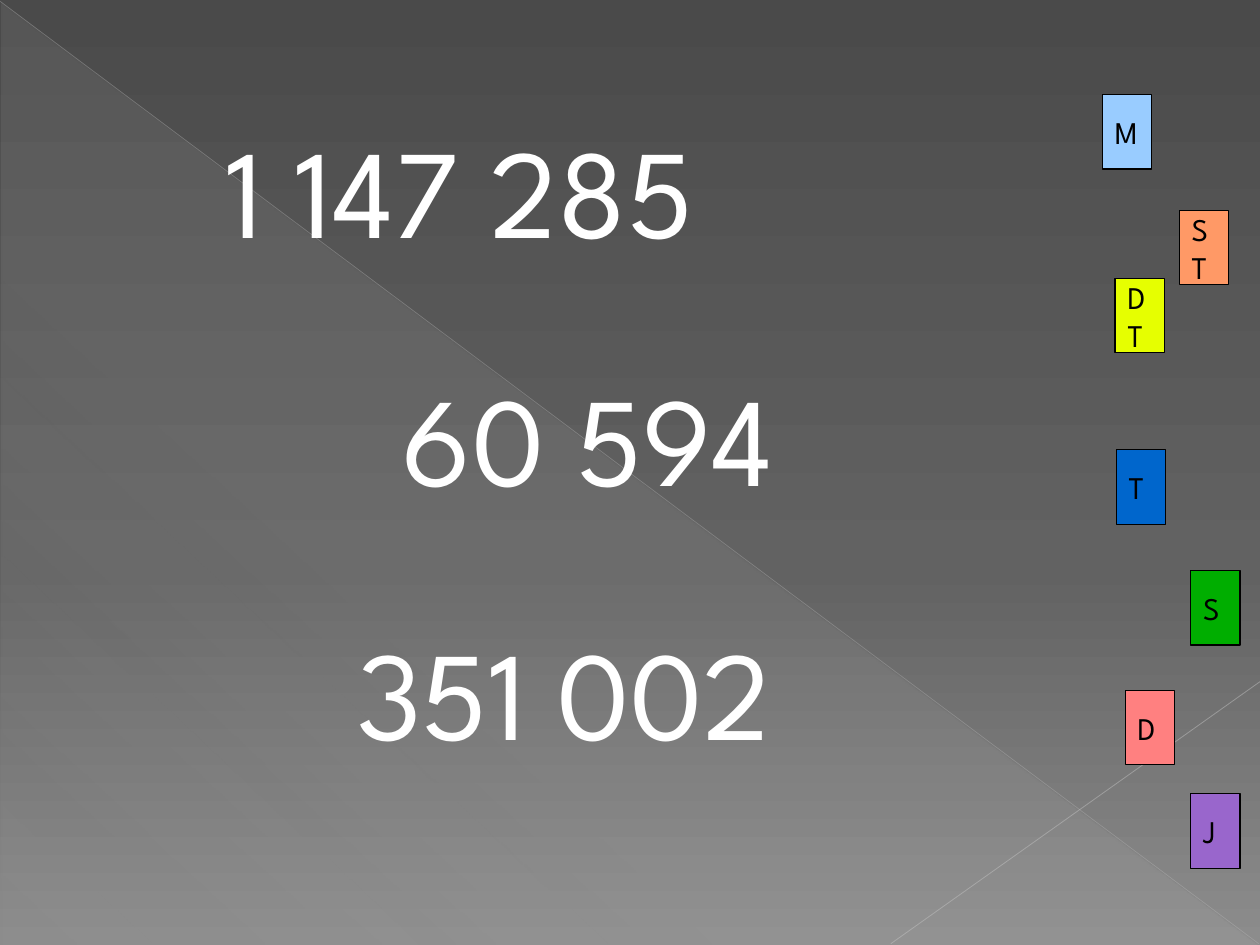
from lxml import etree
from pptx import Presentation
from pptx.dml.color import RGBColor
from pptx.enum.shapes import MSO_CONNECTOR, MSO_SHAPE
from pptx.enum.text import MSO_ANCHOR, PP_ALIGN
from pptx.oxml.ns import qn
from pptx.util import Inches, Pt

STRAIGHT = MSO_CONNECTOR.STRAIGHT
TRIANGLE, CARD = MSO_SHAPE.RIGHT_TRIANGLE, MSO_SHAPE.ROUNDED_RECTANGLE
MIDDLE = MSO_ANCHOR.MIDDLE
LEFT, CENTER = PP_ALIGN.LEFT, PP_ALIGN.CENTER

FONT = "League Spartan"
COLORS = {
    "top": "4A4A4A", "middle": "626262", "bottom": "8C8C8C",
    "facet": "D2D2D2", "diagonal": "BFBFBF", "corner": "C6C6C6",
    "number": "FFFFFF", "black": "000000",
    "M": "99CCFF", "ST": "FF9966", "DT": "E6FF00", "T": "0066CC",
    "S": "00AE00", "D": "FF8080", "J": "9966CC",
}


def set_gradient(fill, owner, angle, stops):
    """Fill with stops of (position %, colour name, opacity %); angle runs clockwise."""
    fill.gradient()
    gradient = next(owner.iter(qn("a:gradFill")))
    for child in list(gradient):
        gradient.remove(child)
    stop_list = etree.SubElement(gradient, qn("a:gsLst"))
    for position, name, opacity in stops:
        stop = etree.SubElement(stop_list, qn("a:gs"), pos=str(position * 1000))
        color = etree.SubElement(stop, qn("a:srgbClr"), val=COLORS[name])
        if opacity < 100:
            etree.SubElement(color, qn("a:alpha"), val=str(opacity * 1000))
    etree.SubElement(gradient, qn("a:lin"), ang=str(angle * 60000), scaled="0")


def style_text(paragraph, text, size, color):
    paragraph.text = text
    paragraph.font.name = FONT
    paragraph.font.size = Pt(size)
    paragraph.font.color.rgb = RGBColor.from_string(COLORS[color])


presentation = Presentation()
presentation.slide_width, presentation.slide_height = Inches(10), Inches(7.5)
slide = presentation.slides.add_slide(presentation.slide_layouts[6])

# Background with a translucent facet and two fine lines
set_gradient(slide.background.fill, slide.element, 90,
             [(0, "top", 100), (60, "middle", 100), (100, "bottom", 100)])

facet = slide.shapes.add_shape(TRIANGLE, Inches(0.01), Inches(0.02), Inches(9.98), Inches(7.48))
facet.shadow.inherit = False
facet.line.fill.background()
set_gradient(facet.fill, facet.element, 133,
             [(0, "facet", 10), (70, "facet", 8), (100, "facet", 1)])

for start, end, name, width, opacity in [
    ((0, 0.01), (9.99, 7.49), "diagonal", 0.39, 35),
    ((10, 5.41), (7.07, 7.49), "corner", 0.47, 45),
]:
    line = slide.shapes.add_connector(
        STRAIGHT, *(Inches(value) for value in start + end))
    line.line.width = Pt(width)
    line.line.color.rgb = RGBColor.from_string(COLORS[name])
    color = next(line.element.iter(qn("a:srgbClr")))
    etree.SubElement(color, qn("a:alpha"), val=str(opacity * 1000))
    etree.SubElement(line.element.spPr, qn("a:effectLst"))

# Large numbers
for text, left, top, width, alignment, indent in [
    ("1 147 285", 1.69, 0.84, 4.88, LEFT, 0),
    (" 60 594", 2.4, 2.81, 4.17, CENTER, 0.12),
    ("351 002", 2.41, 4.83, 4.02, CENTER, 0.12),
]:
    box = slide.shapes.add_textbox(Inches(left), Inches(top), Inches(width), Inches(1.31))
    box.text_frame.word_wrap = True
    paragraph = box.text_frame.paragraphs[0]
    style_text(paragraph, text, 72, "number")
    paragraph.alignment = alignment
    if indent:
        properties = paragraph._p.get_or_add_pPr()
        properties.set("marL", str(Inches(indent)))
        properties.set("indent", "0")

# Place-value cards
for label, left, top in [
    ("M", 8.75, 0.75), ("ST", 9.36, 1.67), ("DT", 8.85, 2.21), ("T", 8.86, 3.57),
    ("S", 9.45, 4.53), ("D", 8.93, 5.48), ("J", 9.45, 6.3),
]:
    card = slide.shapes.add_shape(CARD, Inches(left), Inches(top), Inches(0.39), Inches(0.59))
    card.adjustments[0] = 0
    card.shadow.inherit = False
    card.fill.solid()
    card.fill.fore_color.rgb = RGBColor.from_string(COLORS[label])
    card.line.color.rgb = RGBColor.from_string(COLORS["black"])
    card.line.width = Pt(0.75)
    card.text_frame.word_wrap = True
    card.text_frame.vertical_anchor = MIDDLE
    paragraph = card.text_frame.paragraphs[0]
    style_text(paragraph, label, 18, "black")
    paragraph.alignment = LEFT

presentation.save("out.pptx")
